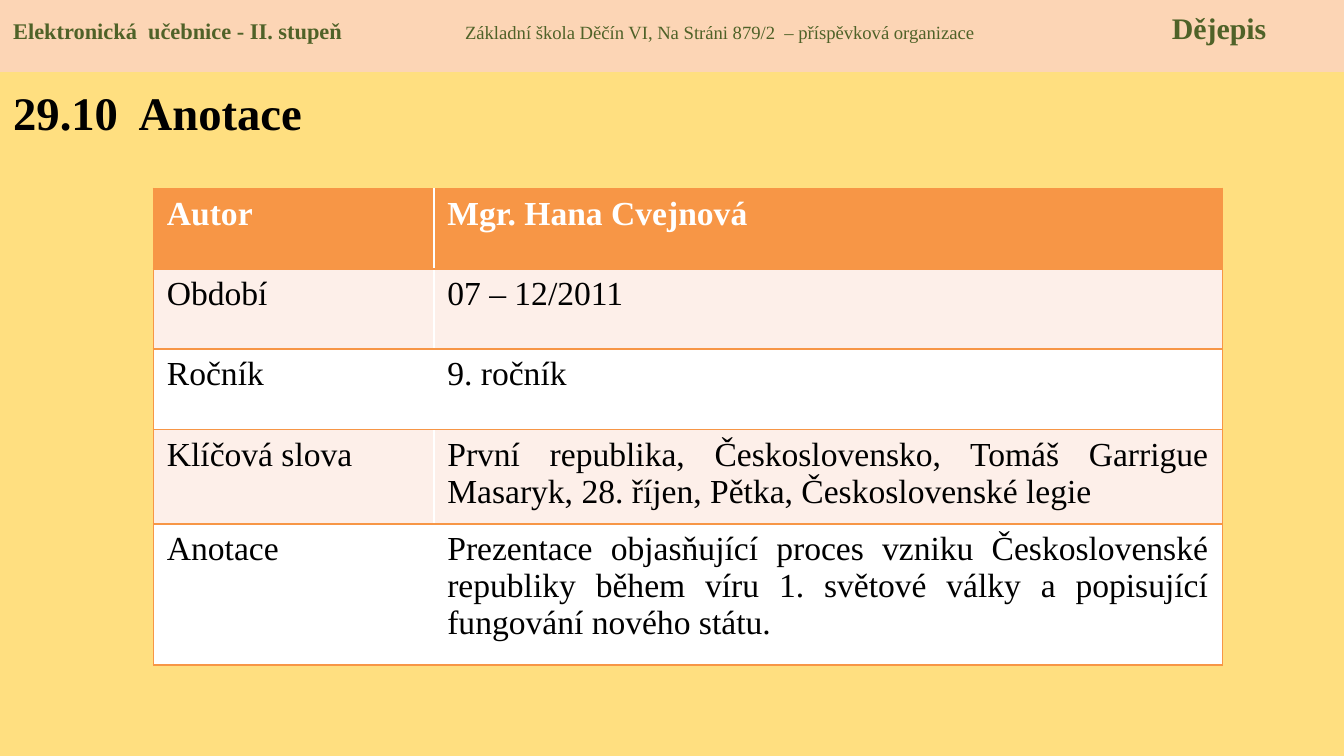
from lxml.etree import SubElement
from pptx import Presentation
from pptx.dml.color import RGBColor
from pptx.enum.shapes import MSO_SHAPE
from pptx.enum.text import MSO_ANCHOR, PP_ALIGN
from pptx.oxml.ns import qn
from pptx.util import Cm, Pt

BACKGROUND = RGBColor(0xFF, 0xDF, 0x80)
PEACH = RGBColor(0xFC, 0xD5, 0xB5)
GREEN = RGBColor(0x4F, 0x62, 0x28)
ORANGE = RGBColor(0xF7, 0x96, 0x46)
PALE = RGBColor(0xFD, 0xEF, 0xE9)
WHITE = RGBColor(0xFF, 0xFF, 0xFF)
BLACK = RGBColor(0, 0, 0)
FONT = "Times New Roman"

HEADER = [
    ("Elektronická  učebnice - II. stupeň", 12, True),
    ("\tZákladní škola Děčín VI, Na Stráni 879/2  – příspěvková organizace", 10, False),
    ("\tDějepis", 16, True),
]
HEADER_TABS = [8.54, 21.9]
TITLE = "29.10  Anotace"
ROWS = [
    ("Autor", "Mgr. Hana Cvejnová", 1.52),
    ("Období", "07 – 12/2011", 1.52),
    ("Ročník", "9. ročník", 1.52),
    ("Klíčová slova", "První republika, Československo, Tomáš Garrigue Masaryk, "
     "28. říjen, Pětka, Československé legie", 1.78),
    ("Anotace", "Prezentace objasňující proces vzniku Československé republiky během "
     "víru 1. světové války a popisující fungování nového státu.", 2.67),
]
COLUMN_WIDTHS = [5.3, 14.9]
FIRST_JUSTIFIED_ROW = 2


def add_text(para, text, size=18, color=BLACK, bold=False, align=PP_ALIGN.LEFT):
    para.alignment = align
    span = para.add_run()
    span.text = text
    span.font.name = FONT
    span.font.size = Pt(size)
    span.font.bold = bold
    span.font.color.rgb = color


def add_tab_stops(para, positions):
    tabs = SubElement(para._p.get_or_add_pPr(), qn("a:tabLst"))
    for position in positions:
        SubElement(tabs, qn("a:tab"), pos=str(Cm(position)), algn="l")


def add_borders(cell, sides):
    properties = cell._tc.get_or_add_tcPr()
    for side in sides:
        line = SubElement(properties, qn(f"a:ln{side}"), w=str(Pt(1)))
        fill = SubElement(line, qn("a:solidFill"))
        SubElement(fill, qn("a:srgbClr"), val=str(ORANGE))


def add_header(page, width):
    band = page.shapes.add_shape(MSO_SHAPE.RECTANGLE, 0, 0, width, Cm(1.36))
    band.shadow.inherit = False
    band.fill.solid()
    band.fill.fore_color.rgb = PEACH
    band.line.fill.background()
    frame = band.text_frame
    frame.vertical_anchor = MSO_ANCHOR.TOP
    frame.margin_top = Cm(0.18)
    para = frame.paragraphs[0]
    add_tab_stops(para, HEADER_TABS)
    for text, size, bold in HEADER:
        add_text(para, text, size=size, color=GREEN, bold=bold)


def add_title(page):
    box = page.shapes.add_textbox(0, Cm(1.35), Cm(9.5), Cm(1.65))
    box.text_frame.word_wrap = True
    box.text_frame.margin_top = Cm(0.23)
    add_text(box.text_frame.paragraphs[0], TITLE, size=25, bold=True)


def add_annotation_table(page):
    height = sum(row[-1] for row in ROWS)
    table = page.shapes.add_table(
        len(ROWS), len(COLUMN_WIDTHS), Cm(2.9), Cm(3.56),
        Cm(sum(COLUMN_WIDTHS)), Cm(height)).table
    for column, width in zip(table.columns, COLUMN_WIDTHS):
        column.width = Cm(width)
    for row_index, (label, value, row_height) in enumerate(ROWS):
        table.rows[row_index].height = Cm(row_height)
        is_head = row_index == 0
        fill = ORANGE if is_head else (PALE if row_index % 2 else WHITE)
        for column_index, text in enumerate((label, value)):
            cell = table.cell(row_index, column_index)
            add_borders(cell, "RTB" if column_index else "LTB")
            cell.fill.solid()
            cell.fill.fore_color.rgb = fill
            justified = column_index == 1 and row_index >= FIRST_JUSTIFIED_ROW
            add_text(cell.text_frame.paragraphs[0], text, bold=is_head,
                     color=WHITE if is_head else BLACK,
                     align=PP_ALIGN.JUSTIFY if justified else PP_ALIGN.LEFT)


def main():
    deck = Presentation()
    deck.slide_width, deck.slide_height = Cm(25.4), Cm(14.29)
    page = deck.slides.add_slide(deck.slide_layouts[6])
    page.background.fill.solid()
    page.background.fill.fore_color.rgb = BACKGROUND
    add_header(page, deck.slide_width)
    add_annotation_table(page)
    add_title(page)
    deck.save("out.pptx")


if __name__ == "__main__":
    main()
